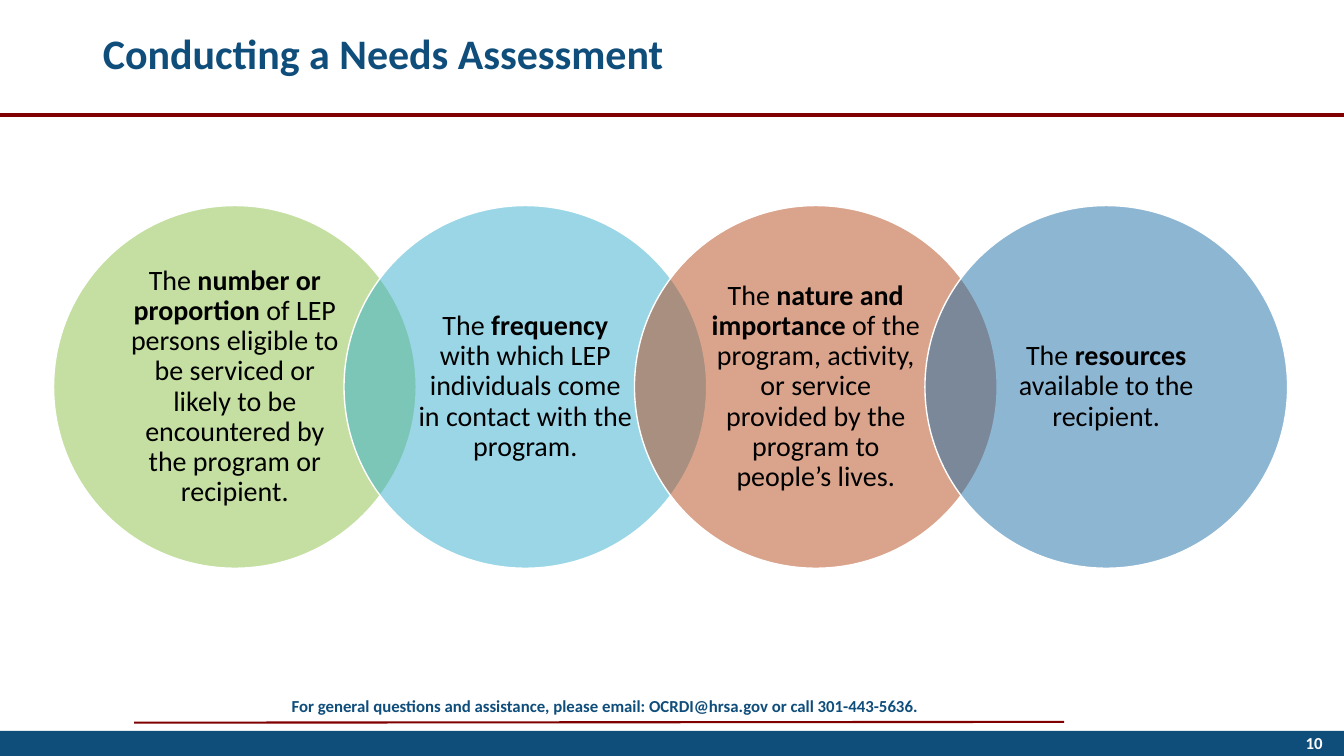
from lxml import etree
from pptx import Presentation
from pptx.dml import color
from pptx.enum import shapes, text
from pptx.oxml import ns
from pptx.util import Cm, Pt

NAVY, MAROON, WHITE, BLACK = "0F4D7B", "800000", "FFFFFF", "000000"
SLIDE_WIDTH, SLIDE_HEIGHT = 33.87, 19.05
CIRCLE_LEFT, CIRCLE_TOP, CIRCLE_SIZE, CIRCLE_STEP = 1.35, 5.18, 9.14, 7.32

# Fill, opening words, bold words, closing words
FACTORS = [
    ("8BC145", "The ", "number or proportion ",
     "of LEP persons eligible to be serviced or likely to be encountered "
     "by the program or recipient."),
    ("36AFCE", "The ", "frequency",
     " with which LEP individuals come in contact with the program."),
    ("B74919", "The ", "nature and importance ",
     "of the program, activity, or service provided by the program to "
     "people’s lives."),
    ("1D6FA9", "The ", "resources", " available to the recipient."),
]


def rgb(value):
    return color.RGBColor.from_string(value)


def format_run(run, size, colour, bold):
    run.font.name = "Calibri"
    run.font.size = Pt(size)
    run.font.bold = bold
    run.font.color.rgb = rgb(colour)


def place(shape, left, top, width, height):
    shape.left, shape.top = Cm(left), Cm(top)
    shape.width, shape.height = Cm(width), Cm(height)


def add_title(slide, wording):
    title = slide.shapes.title
    place(title, 2.34, -0.43, 29.21, 3.68)
    frame = title.text_frame
    frame.text = wording
    frame.auto_size = text.MSO_AUTO_SIZE.NONE
    frame.vertical_anchor = text.MSO_ANCHOR.MIDDLE
    paragraph = frame.paragraphs[0]
    paragraph.alignment = text.PP_ALIGN.LEFT
    paragraph.line_spacing = 0.9
    format_run(paragraph.runs[0], 30, NAVY, True)


def add_rule(slide, start, end, weight):
    line = slide.shapes.add_connector(
        shapes.MSO_CONNECTOR.STRAIGHT, *(Cm(value) for value in start + end))
    line.line.color.rgb = rgb(MAROON)
    line.line.width = Pt(weight)
    etree.SubElement(line.element.spPr, ns.qn("a:effectLst"))


def add_shape(slide, kind, left, top, width, height, fill):
    shape = slide.shapes.add_shape(
        kind, Cm(left), Cm(top), Cm(width), Cm(height))
    shape.shadow.inherit = False
    shape.fill.solid()
    shape.fill.fore_color.rgb = rgb(fill)
    shape.line.fill.background()
    return shape


def add_label(slide, wording, box, colour, alignment, anchor):
    label = slide.shapes.add_textbox(*(Cm(value) for value in box))
    frame = label.text_frame
    frame.word_wrap = True
    frame.vertical_anchor = anchor
    frame.text = wording
    paragraph = frame.paragraphs[0]
    paragraph.alignment = alignment
    format_run(paragraph.runs[0], 12, colour, True)


def add_factor(slide, left, fill, opening, emphasis, closing):
    """Add a half-transparent circle with its text."""
    circle = add_shape(slide, shapes.MSO_SHAPE.OVAL, left, CIRCLE_TOP,
                       CIRCLE_SIZE, CIRCLE_SIZE, fill)
    fill_colour = circle.element.spPr.find(".//" + ns.qn("a:srgbClr"))
    etree.SubElement(fill_colour, ns.qn("a:alpha"), val="50000")
    circle.line.color.rgb = rgb(WHITE)
    circle.line.width = Pt(1)

    frame = circle.text_frame
    frame.word_wrap = True
    frame.vertical_anchor = text.MSO_ANCHOR.MIDDLE
    frame.margin_left = frame.margin_right = Cm(0.5)
    frame.margin_top = frame.margin_bottom = Cm(0.08)
    paragraph = frame.paragraphs[0]
    paragraph.alignment = text.PP_ALIGN.CENTER
    paragraph.line_spacing = 0.9
    for words, bold in ((opening, False), (emphasis, True), (closing, False)):
        run = paragraph.add_run()
        run.text = words
        format_run(run, 20, BLACK, bold)


def main():
    presentation = Presentation()
    presentation.slide_width = Cm(SLIDE_WIDTH)
    presentation.slide_height = Cm(SLIDE_HEIGHT)
    slide = presentation.slides.add_slide(presentation.slide_layouts[5])

    add_rule(slide, (3.38, 18.21), (26.82, 18.19), 1.5)
    add_shape(slide, shapes.MSO_SHAPE.RECTANGLE,
              0, 18.42, SLIDE_WIDTH, 0.63, NAVY)
    add_label(slide,
              "For general questions and assistance, please email: "
              "OCRDI@hrsa.gov or call 301-443-5636.",
              (4.24, 17.4, 22.02, 0.76), NAVY,
              text.PP_ALIGN.CENTER, text.MSO_ANCHOR.TOP)
    add_rule(slide, (0, 2.9), (SLIDE_WIDTH, 2.9), 3)
    add_title(slide, "Conducting a Needs Assessment")

    for index, factor in enumerate(FACTORS):
        add_factor(slide, CIRCLE_LEFT + index * CIRCLE_STEP, *factor)

    add_label(slide, "10", (25.96, 18.21, 7.62, 1.02), WHITE,
              text.PP_ALIGN.RIGHT, text.MSO_ANCHOR.MIDDLE)
    presentation.save("out.pptx")


if __name__ == "__main__":
    main()
